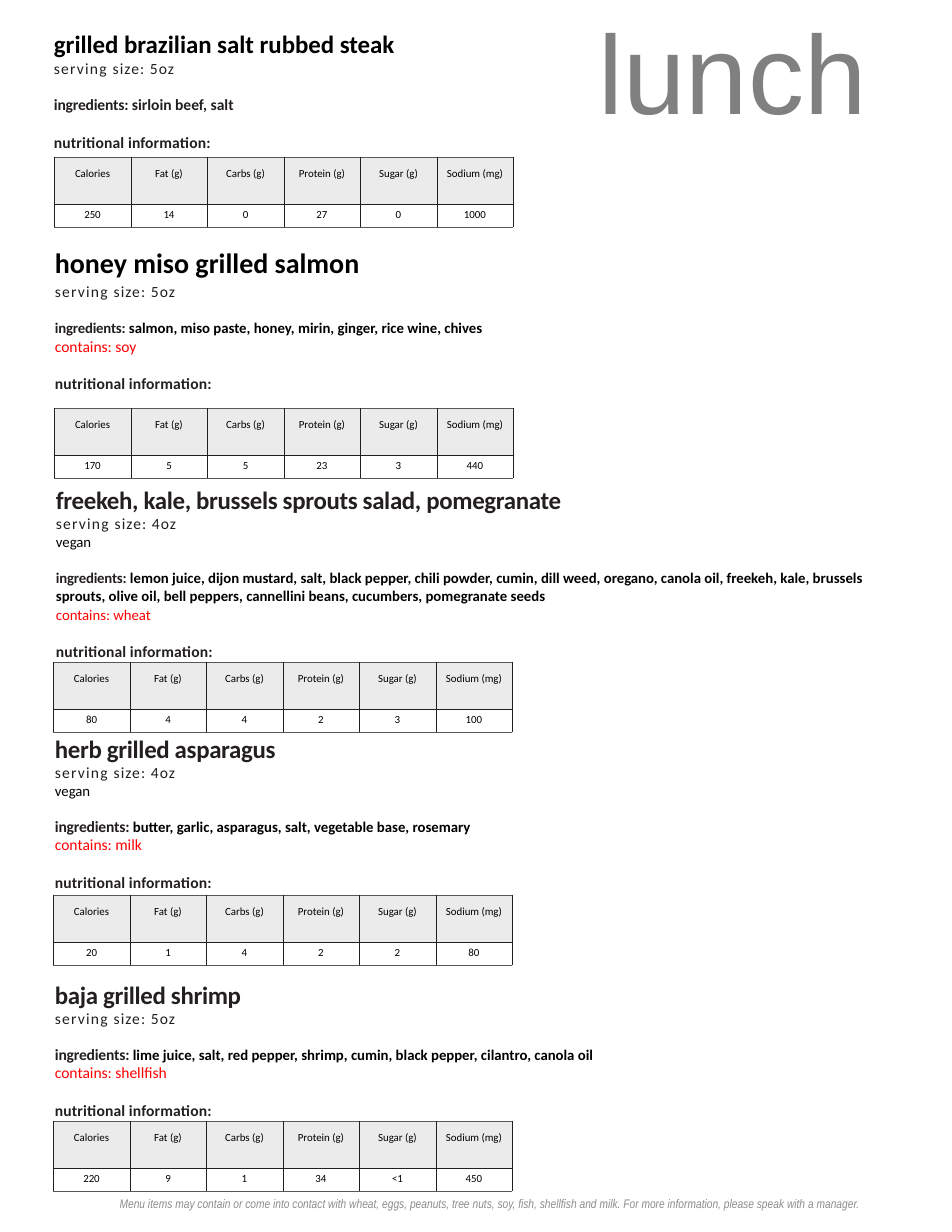
from dataclasses import dataclass
from itertools import accumulate

from lxml import etree
from pptx import Presentation, util as u
from pptx.dml.color import RGBColor
from pptx.enum import text
from pptx.oxml.ns import qn

PX = u.Inches(1) // 112
COLORS = {"black": "000000", "ink": "231F20", "rule": "555859", "header": "EBEBEC",
          "alert": "FF0000", "title": "808080", "note": "8C8C8C"}
HEADINGS = ["Calories", "Fat (g)", "Carbs (g)", "Protein (g)", "Sugar (g)", "Sodium (mg)"]
COLUMN_EDGES = [0, 77, 153, 230, 306, 383, 459]
ROW_HEIGHTS = [47, 23]


@dataclass
class Dish:
    name: str
    serving: str
    ingredients: str
    values: list
    top: int
    table_top: int
    left: int = 55
    table_left: int = 54
    contains: str = ""
    vegan: bool = False
    name_size: int = 16
    name_color: str = "ink"
    name_spacing: float = -0.2
    tight: bool = True
    serving_gap: float = 0
    label_size: float = 10
    body_size: float = 9.5
    body_color: str = "black"
    contains_size: float = 10


DISHES = [
    Dish("grilled brazilian salt rubbed steak", "5oz", "sirloin beef, salt",
         ["250", "14", "0", "27", "0", "1000"], 29, 157, left=54, name_color="black",
         name_spacing=0, tight=False, body_size=10, body_color="ink"),
    Dish("honey miso grilled salmon", "5oz",
         "salmon, miso paste, honey, mirin, ginger, rice wine, chives",
         ["170", "5", "5", "23", "3", "440"], 246, 408, contains="soy", name_size=18,
         name_color="black", name_spacing=0, tight=False, serving_gap=1.6, label_size=9.5),
    Dish("freekeh, kale, brussels sprouts salad, pomegranate", "4oz",
         "lemon juice, dijon mustard, salt, black pepper, chili powder, cumin, dill weed, "
         "oregano, canola oil, freekeh, kale, brussels sprouts, olive oil, bell peppers, "
         "cannellini beans, cucumbers, pomegranate seeds",
         ["80", "4", "4", "2", "3", "100"], 486, 662, left=56, table_left=53,
         contains="wheat", vegan=True, label_size=9.5, contains_size=9.5),
    Dish("herb grilled asparagus", "4oz",
         "butter, garlic, asparagus, salt, vegetable base, rosemary",
         ["20", "1", "4", "2", "2", "80"], 735, 895, table_left=53,
         contains="milk", vegan=True),
    Dish("baja grilled shrimp", "5oz",
         "lime juice, salt, red pepper, shrimp, cumin, black pepper, cilantro, canola oil",
         ["220", "9", "1", "34", "<1", "450"], 981, 1121, table_left=53,
         contains="shellfish"),
]


def color(name):
    return RGBColor.from_string(COLORS[name])


def add_span(para, words, size, fill="black", font="Calibri", bold=False, italic=False,
             spacing=0):
    span = para.add_run()
    span.text = words
    span.font.name, span.font.size = font, u.Pt(size)
    span.font.bold, span.font.italic = bold, italic
    span.font.color.rgb = color(fill)
    if spacing:
        span._r.get_or_add_rPr().set("spc", str(round(spacing * 100)))


def add_box(page, left, top, width, height):
    box = page.shapes.add_textbox(left * PX, top * PX, width * PX, height * PX)
    frame = box.text_frame
    frame.word_wrap = True
    frame.margin_left = frame.margin_right = frame.margin_top = frame.margin_bottom = 0
    return frame


def add_line(frame, line=None, before=0):
    """Return a paragraph, reusing the first empty one; line is an exact height in points."""
    first = frame.paragraphs[0]
    para = frame.add_paragraph() if first.runs else first
    para.space_before = u.Pt(before)
    if line:
        para.line_spacing = u.Pt(line)
    return para


def add_description(page, dish):
    frame = add_box(page, dish.left, dish.top, 841, dish.table_top - dish.top)
    add_span(add_line(frame, 18.6 if dish.tight else None), dish.name, dish.name_size,
             dish.name_color, bold=True, spacing=dish.name_spacing)
    para = add_line(frame, 11.4 if dish.tight else None, dish.serving_gap)
    add_span(para, "serving ", 10, "ink", spacing=0.8)
    add_span(para, f"size: {dish.serving}", 10, "ink", spacing=0.7)
    if dish.vegan:
        add_span(add_line(frame, 11.4), "vegan", 9.5)
    para = add_line(frame, 11.8, before=11.4)
    add_span(para, "ingredients: ", dish.label_size, "ink", bold=True, spacing=-0.1)
    add_span(para, dish.ingredients, dish.body_size, dish.body_color, bold=True)
    if dish.contains:
        add_span(add_line(frame, 11.8), f"contains: {dish.contains}", dish.contains_size,
                 "alert")
    add_span(add_line(frame, before=12.2), "nutritional information:", 10, "ink", bold=True,
             spacing=0.1)


def set_borders(cell, top, bottom):
    props = cell._tc.get_or_add_tcPr()
    sides = [("a:lnL", "ink", 0.25), ("a:lnR", "ink", 0.25),
             ("a:lnT", top, 0.5), ("a:lnB", bottom, 0.5)]
    for index, (tag, name, width) in enumerate(sides):
        line = etree.Element(qn(tag), w=str(u.Pt(width)))
        fill = etree.SubElement(line, qn("a:solidFill"))
        etree.SubElement(fill, qn("a:srgbClr"), val=COLORS[name])
        props.insert(index, line)


def fill_cell(cell, words, is_header):
    cell.margin_left = cell.margin_right = cell.margin_bottom = 0
    cell.margin_top = (10 if is_header else 4) * PX
    para = cell.text_frame.paragraphs[0]
    para.alignment = text.PP_ALIGN.CENTER
    add_span(para, words, 7)
    if is_header:
        cell.fill.solid()
        cell.fill.fore_color.rgb = color("header")
        set_borders(cell, "rule", "ink")
    else:
        cell.fill.background()
        set_borders(cell, "ink", "rule")


def add_nutrition_table(page, dish):
    rows = [HEADINGS, dish.values]
    table = page.shapes.add_table(
        len(rows), len(HEADINGS), dish.table_left * PX, dish.table_top * PX,
        COLUMN_EDGES[-1] * PX, sum(ROW_HEIGHTS) * PX).table
    table.first_row = table.horz_banding = False
    for column, start, end in zip(table.columns, COLUMN_EDGES, COLUMN_EDGES[1:]):
        column.width = (end - start) * PX
    for index, (row, height, words) in enumerate(zip(table.rows, ROW_HEIGHTS, rows)):
        row.height = height * PX
        for cell, value in zip(row.cells, words):
            fill_cell(cell, value, index == 0)


def set_title(page, words):
    title = page.shapes.title
    title.left, title.top, title.width, title.height = (
        length * PX for length in (513, -3, 439, 147))
    frame = title.text_frame
    frame.auto_size = text.MSO_AUTO_SIZE.NONE
    frame.vertical_anchor = text.MSO_ANCHOR.TOP
    frame.paragraphs[0].alignment = text.PP_ALIGN.CENTER
    add_span(frame.paragraphs[0], words, 72, "title", font="Arial")


def add_note(page, words):
    para = add_line(add_box(page, 66, 1196, 849, 15))
    para.alignment = text.PP_ALIGN.CENTER
    add_span(para, words, 8, "note", font="Arial Narrow", italic=True)


def main():
    deck = Presentation()
    deck.slide_width, deck.slide_height = 952 * PX, 1232 * PX
    page = deck.slides.add_slide(deck.slide_layouts.get_by_name("Title Only"))
    set_title(page, "lunch")
    for dish in DISHES:
        add_description(page, dish)
        add_nutrition_table(page, dish)
    add_note(page, "Menu items may contain or come into contact with wheat, eggs, peanuts, "
                   "tree nuts, soy, fish, shellfish and milk. For more information, please "
                   "speak with a manager.")
    deck.save("out.pptx")


if __name__ == "__main__":
    main()
